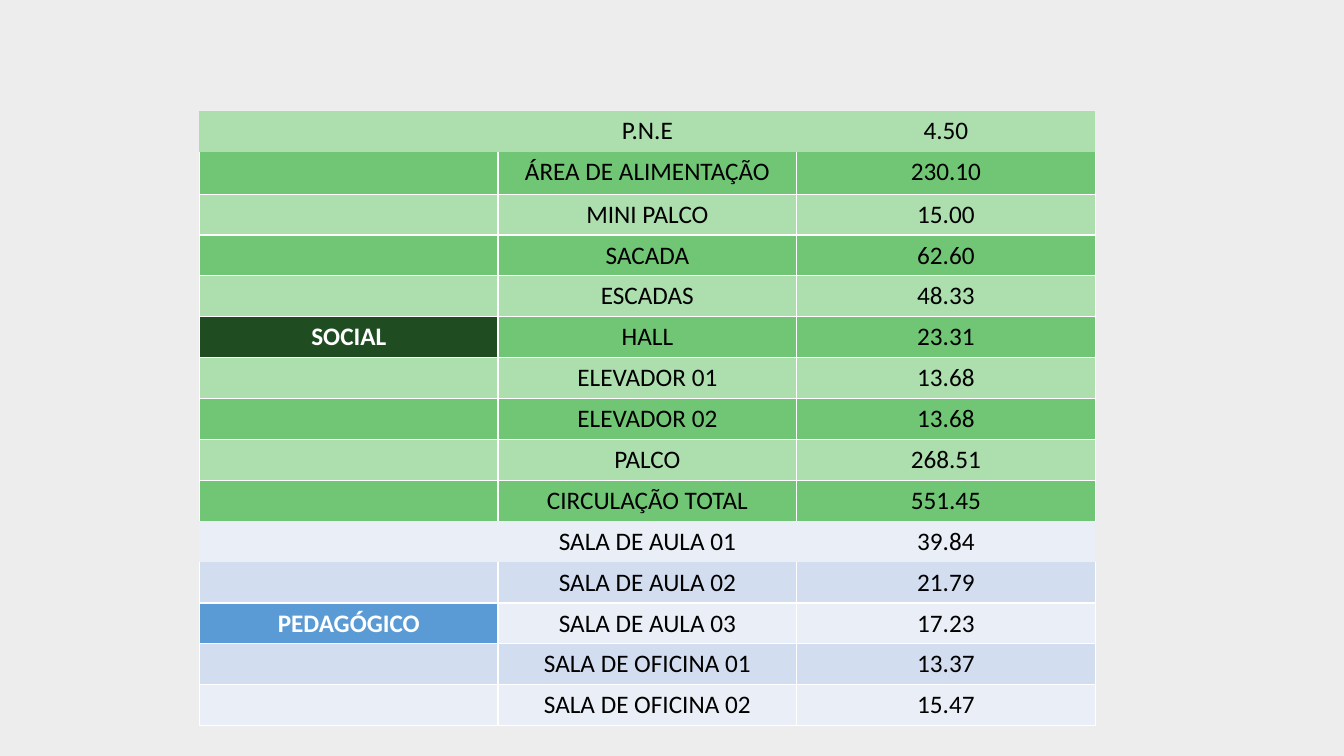
from dataclasses import dataclass

from lxml.etree import SubElement
from pptx import Presentation
from pptx.dml.color import RGBColor
from pptx.enum.text import PP_ALIGN as Align
from pptx.oxml.ns import qn
from pptx.util import Pt


@dataclass(frozen=True)
class Theme:
    font: str = "Calibri"
    text_size: float = 18
    border_width: float = 1
    background: str = "EDEDED"
    border: str = "FFFFFF"
    text: str = "000000"
    label_text: str = "FFFFFF"
    social_bands: tuple = ("ACDEAE", "70C674")
    social_label: str = "1F4D21"
    teaching_bands: tuple = ("EAEFF7", "D2DEEF")
    teaching_label: str = "5B9BD5"


TABLE_LEFT = 142.5
TABLE_TOP = 79.2
COLUMN_WIDTH = 213.3
ROW_HEIGHT = 29.2
TALL_ROW_HEIGHT = 30.3

SOCIAL_AREAS = [
    ("", "P.N.E", "4.50"),
    ("", "ÁREA DE ALIMENTAÇÃO", "230.10"),
    ("", "MINI PALCO", "15.00"),
    ("", "SACADA", "62.60"),
    ("", "ESCADAS", "48.33"),
    ("SOCIAL", "HALL", "23.31"),
    ("", "ELEVADOR 01", "13.68"),
    ("", "ELEVADOR 02", "13.68"),
    ("", "PALCO", "268.51"),
    ("", "CIRCULAÇÃO TOTAL", "551.45"),
]
TEACHING_AREAS = [
    ("", "SALA DE AULA 01", "39.84"),
    ("", "SALA DE AULA 02", "21.79"),
    ("PEDAGÓGICO", "SALA DE AULA 03", "17.23"),
    ("", "SALA DE OFICINA 01", "13.37"),
    ("", "SALA DE OFICINA 02", "15.47"),
]


def write_text(cell, text, *, font, size, color, bold=False):
    paragraph = cell.text_frame.paragraphs[0]
    paragraph.alignment = Align.CENTER
    run = paragraph.add_run()
    run.text = text
    run.font.name = font
    run.font.size = Pt(size)
    run.font.bold = bold
    run.font.color.rgb = RGBColor.from_string(color)


class SlideBuilder:
    def __init__(self, slide, theme):
        self.slide = slide
        self.theme = theme

    def paint_background(self):
        fill = self.slide.background.fill
        fill.solid()
        fill.fore_color.rgb = RGBColor.from_string(self.theme.background)

    def set_borders(self, cell, visible_sides):
        """Draw the given sides (from "LRTB") and switch the others off."""
        properties = cell._tc.get_or_add_tcPr()
        for side in "LRTB":
            line = SubElement(properties, qn(f"a:ln{side}"),
                              w=str(Pt(self.theme.border_width)))
            if side in visible_sides:
                fill = SubElement(line, qn("a:solidFill"))
                SubElement(fill, qn("a:srgbClr"), val=self.theme.border)
            else:
                SubElement(line, qn("a:noFill"))

    def add_area_table(self, top, areas, bands, label_fill, row_heights):
        """Add a banded table whose first row has no borders; return its bottom."""
        theme = self.theme
        column_count = len(areas[0])
        height = sum(row_heights)
        table = self.slide.shapes.add_table(
            len(areas), column_count, Pt(TABLE_LEFT), Pt(top),
            Pt(column_count * COLUMN_WIDTH), Pt(height)).table
        table.first_row = False
        table.horz_banding = False
        for column in table.columns:
            column.width = Pt(COLUMN_WIDTH)

        for row_index, area in enumerate(areas):
            table.rows[row_index].height = Pt(row_heights[row_index])
            sides = ("", "LRB")[row_index] if row_index < 2 else "LRTB"
            for column_index, text in enumerate(area):
                cell = table.cell(row_index, column_index)
                is_label = column_index == 0 and text != ""
                self.set_borders(cell, sides)
                cell.fill.solid()
                cell.fill.fore_color.rgb = RGBColor.from_string(
                    label_fill if is_label else bands[row_index % 2])
                if text:
                    write_text(cell, text, font=theme.font, size=theme.text_size,
                               color=theme.label_text if is_label else theme.text,
                               bold=is_label)
        return top + height


def main():
    presentation = Presentation()
    presentation.slide_width = Pt(960)
    presentation.slide_height = Pt(540)
    theme = Theme()
    slide = presentation.slides.add_slide(presentation.slide_layouts[6])
    builder = SlideBuilder(slide, theme)
    builder.paint_background()

    social_heights = [ROW_HEIGHT] * len(SOCIAL_AREAS)
    social_heights[1] = TALL_ROW_HEIGHT
    social_bottom = builder.add_area_table(
        TABLE_TOP, SOCIAL_AREAS, theme.social_bands, theme.social_label,
        social_heights)
    builder.add_area_table(
        social_bottom, TEACHING_AREAS, theme.teaching_bands, theme.teaching_label,
        [ROW_HEIGHT] * len(TEACHING_AREAS))

    presentation.save("out.pptx")


if __name__ == "__main__":
    main()
